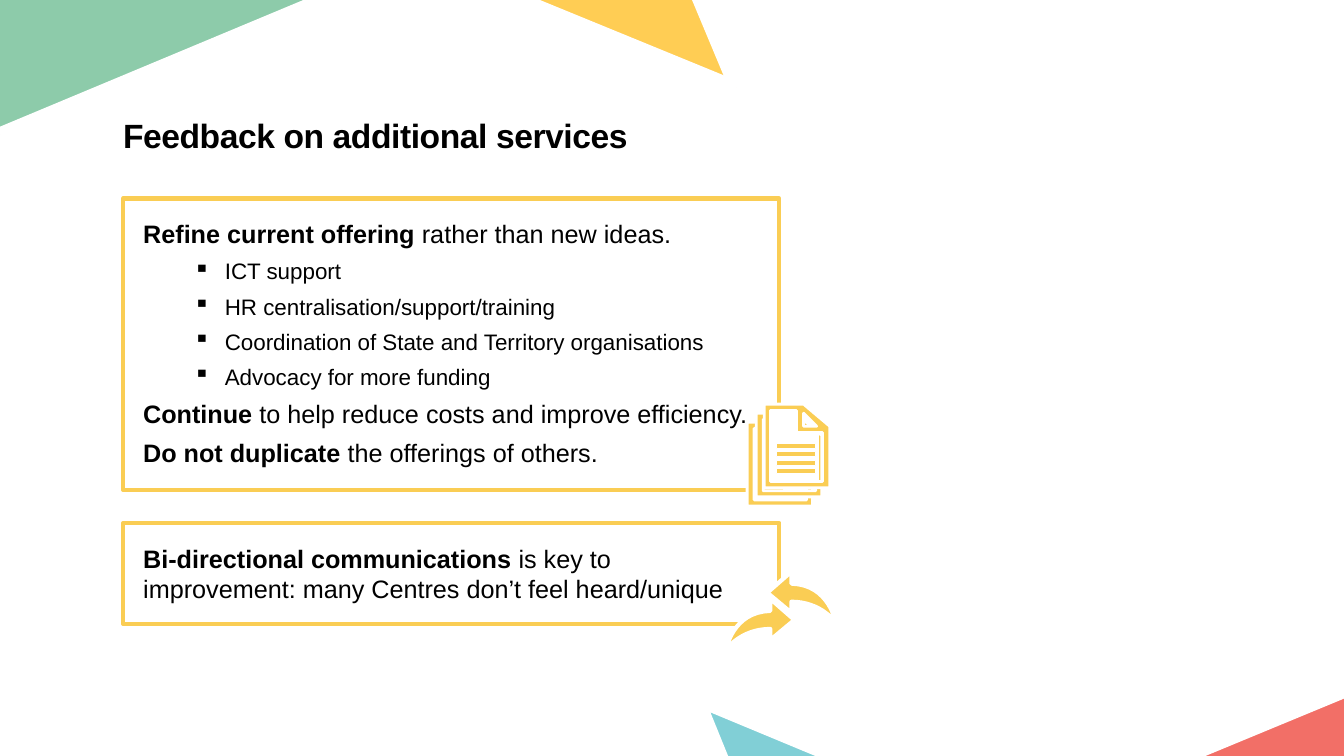
from lxml import etree
from pptx import Presentation
from pptx.dml.color import RGBColor
from pptx.enum.shapes import MSO_SHAPE
from pptx.enum.text import MSO_ANCHOR, MSO_AUTO_SIZE, PP_ALIGN
from pptx.oxml.ns import qn
from pptx.util import Pt

PX = 9144
RECT = MSO_SHAPE.RECTANGLE
TOP = MSO_ANCHOR.TOP
LEFT = PP_ALIGN.LEFT
NO_FIT = MSO_AUTO_SIZE.NONE

BLACK = RGBColor(0x00, 0x00, 0x00)
WHITE = RGBColor(0xFF, 0xFF, 0xFF)
GREEN = RGBColor(0x8D, 0xCB, 0xAA)
YELLOW = RGBColor(0xFF, 0xCD, 0x54)
TEAL = RGBColor(0x81, 0xCF, 0xD6)
RED = RGBColor(0xF2, 0x6F, 0x67)
GOLD = RGBColor(0xFA, 0xCD, 0x54)
FONT = "Arial"

CORNERS = [
    (GREEN, [(328, -4), (0, -4), (0, 133)], [[(0, 133), (328, -4)]], 9.69),
    (YELLOW, [(692, -4), (508, -4), (730, 87)],
     [[(730, 87), (692, -4)], [(508, -4), (730, 87)]], 9.69),
    (TEAL, [(690, 692), (716, 756), (844, 756)],
     [[(844, 756), (690, 692), (716, 756)]], 11.54),
    (RED, [(1334, 684), (1165, 754), (1334, 754)], [[(1334, 684), (1165, 754)]], 11.54),
]

OFFERING = [
    (0, [("Refine current offering ", True), ("rather than new ideas.", False)]),
    (1, [("ICT support", False)]),
    (1, [("HR centralisation/support/training", False)]),
    (1, [("Coordination of State and Territory organisations", False)]),
    (1, [("Advocacy for more funding", False)]),
    (0, [("Continue", True), (" to help reduce costs and improve efficiency.", False)]),
    (0, [("Do not duplicate ", True), ("the offerings of others.", False)]),
]
COMMUNICATION = [
    (0, [("Bi-directional communications ", True),
         ("is key to improvement: many Centres don’t feel heard/unique", False)]),
]

SHEET = [(39, 0), (0, 0), (0, 83), (65, 83), (65, 22)]
BACK_HOLE = [(7, 77), (7, 6), (27, 6), (26, 60), (59, 60), (59, 77)]
FRONT_HOLE = [(6, 77), (6, 6), (32, 6), (32, 28), (58, 28), (58, 77)]
FOLD = [(39, 9), (52, 22), (39, 22)]
BACK_BARS = [11, 11, 11, 24]
FRONT_BARS = [39] * 4


def style(sp, fill, line, width):
    sp.shadow.inherit = False
    if fill is None:
        sp.fill.background()
    else:
        sp.fill.solid()
        sp.fill.fore_color.rgb = fill
    if line is None:
        sp.line.fill.background()
    else:
        sp.line.color.rgb = line
        sp.line.width = Pt(width)


def add_outline(slide, contours, fill=None, line=None, width=0, close=True):
    scaled = [[(x * PX, y * PX) for x, y in c] for c in contours]
    builder = slide.shapes.build_freeform(*scaled[0][0])
    for i, points in enumerate(scaled):
        if i:
            builder.move_to(*points[0])
        builder.add_line_segments(points[1:], close=close)
    style(builder.convert_to_shape(), fill, line, width)


def add_rect(slide, x, y, w, h, fill, line, width):
    sp = slide.shapes.add_shape(RECT, x * PX, y * PX, w * PX, h * PX)
    style(sp, fill, line, width)
    return sp


def add_run(p, text, size, bold):
    r = p.add_run()
    r.text = text
    r.font.name = FONT
    r.font.size = Pt(size)
    r.font.bold = bold
    r.font.color.rgb = BLACK
    return r


def setup_frame(tf, inset):
    tf.word_wrap = True
    tf.auto_size = NO_FIT
    tf.vertical_anchor = TOP
    tf.margin_left = tf.margin_right = tf.margin_top = tf.margin_bottom = inset * PX


def add_bullet(p):
    p.level = 1
    pPr = p._p.get_or_add_pPr()
    pPr.set("marL", str(81 * PX))
    pPr.set("indent", str(-31 * PX))
    etree.SubElement(pPr, qn("a:buChar")).set("char", "▪")


def add_title(slide, text):
    title = slide.shapes.title
    title.left, title.top, title.width, title.height = (
        v * PX for v in (122, 114, 1194, 41))
    setup_frame(title.text_frame, 0)
    p = title.text_frame.paragraphs[0]
    p.alignment = LEFT
    r = add_run(p, text, 24, True)
    r._r.get_or_add_rPr().set("spc", "-30")


def add_text_panel(slide, y, h, paragraphs):
    tf = add_rect(slide, 122, y, 651, h, None, GOLD, 3).text_frame
    setup_frame(tf, 20)
    for i, (level, runs) in enumerate(paragraphs):
        p = tf.add_paragraph() if i else tf.paragraphs[0]
        p.alignment = LEFT
        p.space_before = Pt(6 if len(paragraphs) > 1 else 0)
        if level:
            add_bullet(p)
        for text, bold in runs:
            add_run(p, text, 16 if level else 18, bold)


def bezier(a, b, c, d, steps=16):
    def at(t, i):
        s = 1 - t
        return s**3 * a[i] + 3 * s * s * t * b[i] + 3 * s * t * t * c[i] + t**3 * d[i]
    return [(at(k / steps, 0), at(k / steps, 1)) for k in range(steps + 1)]


def add_arrows(slide):
    tail = (829, 618)
    left = [(761, 588), (785, 567)]
    left += bezier((785, 579), (823, 580), tail, tail)
    left += bezier(tail, tail, (815, 597), (785, 597))[1:]
    left.append((785, 608))
    right = [(1549 - x, y + 27) for x, y in left]
    for arrow in (left, right):
        add_outline(slide, [arrow], GOLD, WHITE, 3)


def add_page(slide, x, y, holes, bars):
    contours = [[(x + dx, y + dy) for dx, dy in c] for c in [SHEET, *holes]]
    add_outline(slide, contours, GOLD, WHITE, 2)
    for i, w in enumerate(bars):
        add_rect(slide, x + 12, y + 39 + round(i * 8.3), w, 5, GOLD, WHITE, 1)


def add_documents(slide):
    add_page(slide, 741, 419, [BACK_HOLE], BACK_BARS)
    add_page(slide, 750, 410, [BACK_HOLE], BACK_BARS)
    add_rect(slide, 765, 408, 25, 70, WHITE, WHITE, 1)
    add_rect(slide, 782, 429, 30, 50, WHITE, WHITE, 1)
    add_page(slide, 758, 401, [FRONT_HOLE, FOLD], FRONT_BARS)


def main():
    prs = Presentation()
    prs.slide_width = 1333 * PX
    prs.slide_height = 750 * PX
    slide = prs.slides.add_slide(prs.slide_layouts[5])
    for color, triangle, edges, width in CORNERS:
        add_outline(slide, [triangle], color)
        add_outline(slide, edges, None, WHITE, width, close=False)
    add_title(slide, "Feedback on additional services")
    add_text_panel(slide, 197, 289, OFFERING)
    add_text_panel(slide, 519, 100, COMMUNICATION)
    add_arrows(slide)
    add_documents(slide)
    prs.save("out.pptx")


if __name__ == "__main__":
    main()
